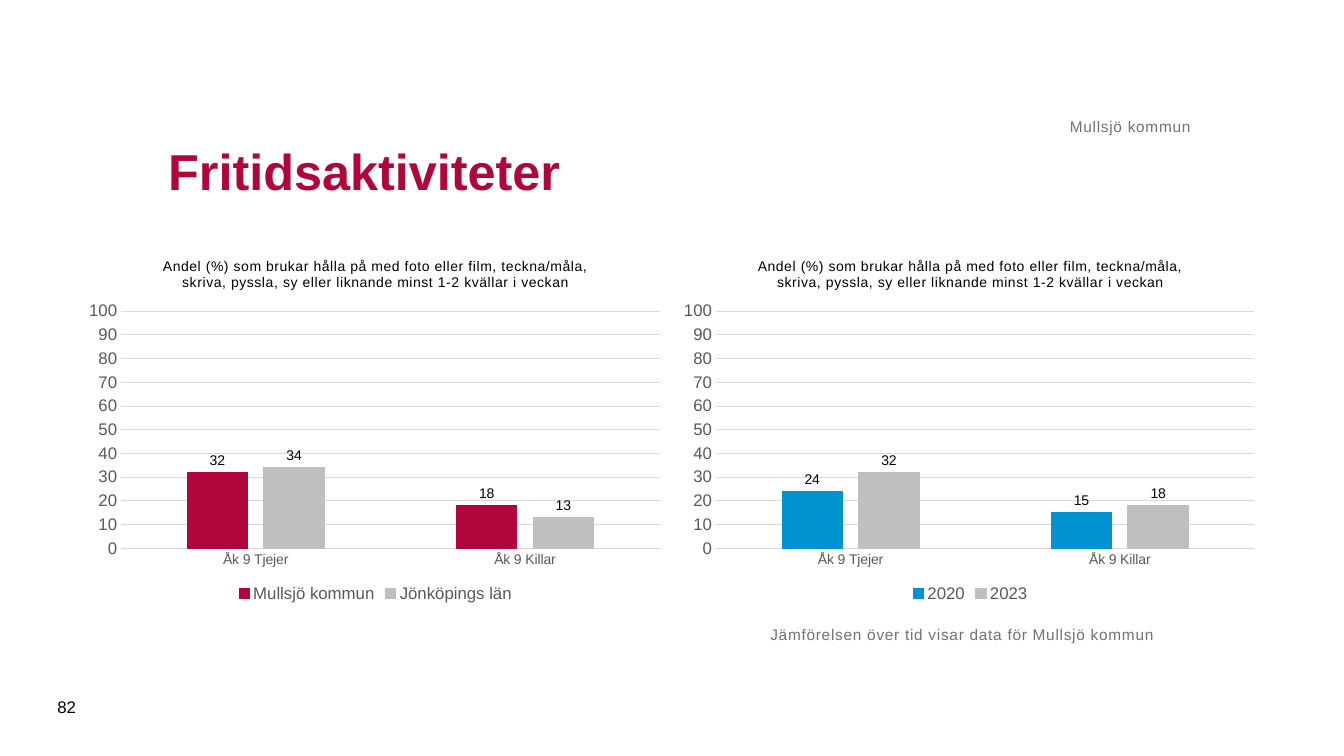
from lxml import etree
from pptx import Presentation
from pptx.chart.data import CategoryChartData
from pptx.dml.color import RGBColor
from pptx.enum import chart as ch, text
from pptx.oxml import parse_xml
from pptx.oxml.ns import nsdecls
from pptx.util import Inches, Pt

CRIMSON, BLUE, SILVER = "B1063A", "0093D0", "BFBFBF"
BLACK, GREY, AXIS_GREY, GRID_GREY = "000000", "717171", "595959", "D9D9D9"
QUESTION = ("Andel (%) som brukar hålla på med foto eller film, teckna/måla, "
            "skriva, pyssla, sy eller liknande minst 1-2 kvällar i veckan")
NUMBER_FORMAT = "#,##0;#,##0"
PLOT_AREA = {"x": 0.07, "y": 0.19, "w": 0.91, "h": 0.65}


def style_font(font, size, color, bold=False, spacing=0):
    """Set Arial with the given look; spacing is in hundredths of a point."""
    font.name, font.size, font.bold = "Arial", Pt(size), bold
    font.color.rgb = RGBColor.from_string(color)
    if spacing:
        font._element.set("spc", str(spacing))


def paint_line(line, color):
    line.color.rgb = RGBColor.from_string(color)
    line.width = Pt(0.75)


deck = Presentation()
deck.slide_width, deck.slide_height = Inches(13.33), Inches(7.5)
page = deck.slides.add_slide(deck.slide_layouts[6])

# Column charts: left edge, then name, values and colour of each series
charts = [
    (0.79, [("Mullsjö kommun", (32, 18), CRIMSON), ("Jönköpings län", (34, 13), SILVER)]),
    (6.69, [("2020", (24, 15), BLUE), ("2023", (32, 18), SILVER)]),
]
for left, series_rows in charts:
    data = CategoryChartData(number_format=NUMBER_FORMAT)
    data.categories = ["Åk 9 Tjejer", "Åk 9 Killar"]
    for name, values, _ in series_rows:
        data.add_series(name, values)
    chart = page.shapes.add_chart(
        ch.XL_CHART_TYPE.COLUMN_CLUSTERED, Inches(left), Inches(2.4),
        Inches(5.87), Inches(3.62), data).chart
    style_font(chart.font, 10, BLACK)

    chart.has_title = True
    span = chart.chart_title.text_frame.paragraphs[0].add_run()
    span.text = QUESTION
    style_font(span.font, 10, BLACK, spacing=50)
    chart.chart_title.include_in_layout = False

    chart.has_legend = True
    chart.legend.position = ch.XL_LEGEND_POSITION.BOTTOM
    chart.legend.include_in_layout = False
    style_font(chart.legend.font, 12, AXIS_GREY)

    for axis, size in ((chart.category_axis, 10), (chart.value_axis, 12)):
        axis.major_tick_mark = axis.minor_tick_mark = ch.XL_TICK_MARK.NONE
        style_font(axis.tick_labels.font, size, AXIS_GREY)
    paint_line(chart.category_axis.format.line, GRID_GREY)
    scale = chart.value_axis
    scale.minimum_scale, scale.maximum_scale, scale.major_unit = 0, 100, 10
    scale.tick_labels.number_format = NUMBER_FORMAT
    scale.tick_labels.number_format_is_linked = False
    scale.format.line.fill.background()
    paint_line(scale.major_gridlines.format.line, GRID_GREY)

    plot = chart.plots[0]
    plot.gap_width, plot.overlap, plot.vary_by_categories = 219, -27, False
    for series, (_, _, color) in zip(plot.series, series_rows):
        series.format.fill.solid()
        series.format.fill.fore_color.rgb = RGBColor.from_string(color)
        paint_line(series.format.line, color)
        labels = series.data_labels
        labels.show_value = True
        labels.position = ch.XL_LABEL_POSITION.OUTSIDE_END
        labels.number_format, labels.number_format_is_linked = NUMBER_FORMAT, False
        style_font(labels.font, 10, BLACK)

    # Fix the inner plot area as fractions of the chart
    layout = parse_xml(
        f'<c:layout {nsdecls("c")}><c:manualLayout><c:layoutTarget val="inner"/>'
        '<c:xMode val="edge"/><c:yMode val="edge"/></c:manualLayout></c:layout>')
    for key, fraction in PLOT_AREA.items():
        etree.SubElement(layout[0], layout.tag.replace("layout", key)).set("val", str(fraction))
    plot_area = chart._chartSpace.chart.plotArea
    for old_layout in plot_area.findall(layout.tag):
        plot_area.remove(old_layout)
    plot_area.insert(0, layout)

# Text: wording, place, size, colour, bold, letter spacing, anchor, alignment, has insets
TOP, MIDDLE, BOTTOM = text.MSO_ANCHOR.TOP, text.MSO_ANCHOR.MIDDLE, text.MSO_ANCHOR.BOTTOM
LEFT, RIGHT = text.PP_ALIGN.LEFT, text.PP_ALIGN.RIGHT
texts = [
    ("Fritidsaktiviteter", (1.57, 0.98, 10.24, 1.42), 36, CRIMSON, True, 0, MIDDLE, LEFT, True),
    ("Mullsjö kommun", (1.57, 0.62, 10.24, 0.73), 11, GREY, False, 50, BOTTOM, RIGHT, False),
    ("82", (0.47, 6.81, 0.57, 0.4), 12, BLACK, False, 0, MIDDLE, LEFT, True),
    ("Jämförelsen över tid visar data för Mullsjö kommun", (7.64, 6.2, 5.31, 0.94),
     11, GREY, False, 50, TOP, LEFT, False),
]
for wording, place, size, color, bold, spacing, anchor, alignment, has_insets in texts:
    frame = page.shapes.add_textbox(*map(Inches, place)).text_frame
    frame.word_wrap, frame.vertical_anchor = True, anchor
    if not has_insets:
        frame.margin_left = frame.margin_right = frame.margin_top = frame.margin_bottom = 0
    para = frame.paragraphs[0]
    para.alignment = alignment
    span = para.add_run()
    span.text = wording
    style_font(span.font, size, color, bold, spacing)

deck.save("out.pptx")
